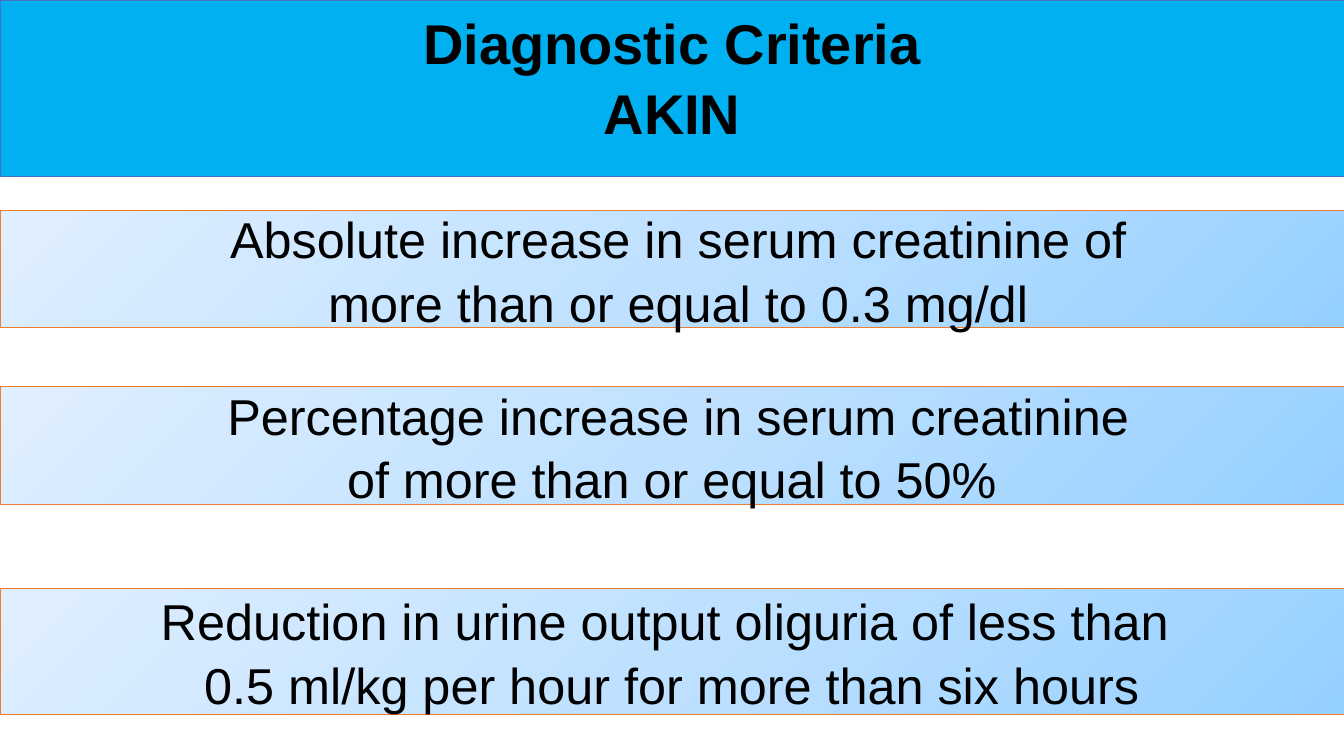
"""Build the AKIN diagnostic criteria slide."""
from copy import deepcopy
from dataclasses import dataclass

from pptx import Presentation
from pptx.dml.color import RGBColor
from pptx.enum.shapes import MSO_SHAPE
from pptx.enum.text import MSO_ANCHOR, MSO_AUTO_SIZE, PP_ALIGN
from pptx.util import Emu, Pt

PX = 9525
SLIDE_WIDTH, SLIDE_HEIGHT = 1280, 720
HEADING = ["Diagnostic Criteria", "AKIN"]
HEADING_HEIGHT = 168
CRITERIA = [
    {"top": 200, "height": 112, "rtl": True,
     "lines": ["Absolute increase in serum creatinine of ",
               "more than or equal to 0.3 mg/dl "]},
    {"top": 368, "height": 112, "rtl": True,
     "lines": ["Percentage increase in serum creatinine ",
               "of more than or equal to 50%"]},
    {"top": 560, "height": 120, "rtl": False,
     "lines": ["Reduction in urine output oliguria of less than ",
               "0.5 ml/kg per hour for more than six hours"]},
]


@dataclass(frozen=True)
class Theme:
    font: str = "Arial"
    heading_size: int = 40
    criterion_size: int = 36
    line_spacing: float = 1.05
    text: str = "000000"
    heading_fill: str = "00B0F0"
    heading_line: str = "4472C4"
    band_line: str = "ED7D31"
    band_stops: tuple = ((0, "96D0FF"), (0.5, "BFE1FF"), (1, "E0EFFF"))
    band_angle: int = 135
    line_width: float = 0.5


THEME = Theme()


def write(shape, lines, *, size, bold=False, rtl=False, anchor, wrap):
    frame = shape.text_frame
    frame.auto_size = MSO_AUTO_SIZE.NONE
    frame.word_wrap = wrap
    frame.vertical_anchor = anchor
    frame.text = "\n".join(lines)
    for paragraph in frame.paragraphs:
        paragraph.alignment = PP_ALIGN.CENTER
        paragraph.line_spacing = THEME.line_spacing
        paragraph.space_before = Pt(0)
        paragraph._p.get_or_add_pPr().set("rtl", str(int(rtl)))
        for run in paragraph.runs:
            run.font.name = THEME.font
            run.font.size = Pt(size)
            run.font.bold = bold
            run.font.color.rgb = RGBColor.from_string(THEME.text)


def outline(shape, color):
    shape.line.color.rgb = RGBColor.from_string(color)
    shape.line.width = Pt(THEME.line_width)


def fill_band(band):
    band.fill.gradient()
    band.fill.gradient_angle = THEME.band_angle
    first_stop = band.fill._fill._gradFill.gsLst[0]
    first_stop.addnext(deepcopy(first_stop))
    for stop, (position, color) in zip(band.fill.gradient_stops, THEME.band_stops):
        stop.position = position
        stop.color.rgb = RGBColor.from_string(color)


def add_heading(slide):
    heading = slide.shapes.title
    heading.left, heading.top = Emu(0), Emu(0)
    heading.width, heading.height = Emu(SLIDE_WIDTH * PX), Emu(HEADING_HEIGHT * PX)
    heading.fill.solid()
    heading.fill.fore_color.rgb = RGBColor.from_string(THEME.heading_fill)
    outline(heading, THEME.heading_line)
    write(heading, HEADING, size=THEME.heading_size, bold=True, rtl=True,
          anchor=MSO_ANCHOR.TOP, wrap=True)


def add_criterion(slide, criterion):
    band = slide.shapes.add_shape(
        MSO_SHAPE.RECTANGLE, 0, criterion["top"] * PX,
        SLIDE_WIDTH * PX, criterion["height"] * PX)
    band.shadow.inherit = False
    fill_band(band)
    outline(band, THEME.band_line)
    write(band, criterion["lines"], size=THEME.criterion_size,
          rtl=criterion["rtl"], anchor=MSO_ANCHOR.MIDDLE, wrap=False)


def main():
    deck = Presentation()
    deck.slide_width, deck.slide_height = SLIDE_WIDTH * PX, SLIDE_HEIGHT * PX
    slide = deck.slides.add_slide(deck.slide_layouts[5])
    add_heading(slide)
    for criterion in CRITERIA:
        add_criterion(slide, criterion)
    deck.save("out.pptx")


if __name__ == "__main__":
    main()
